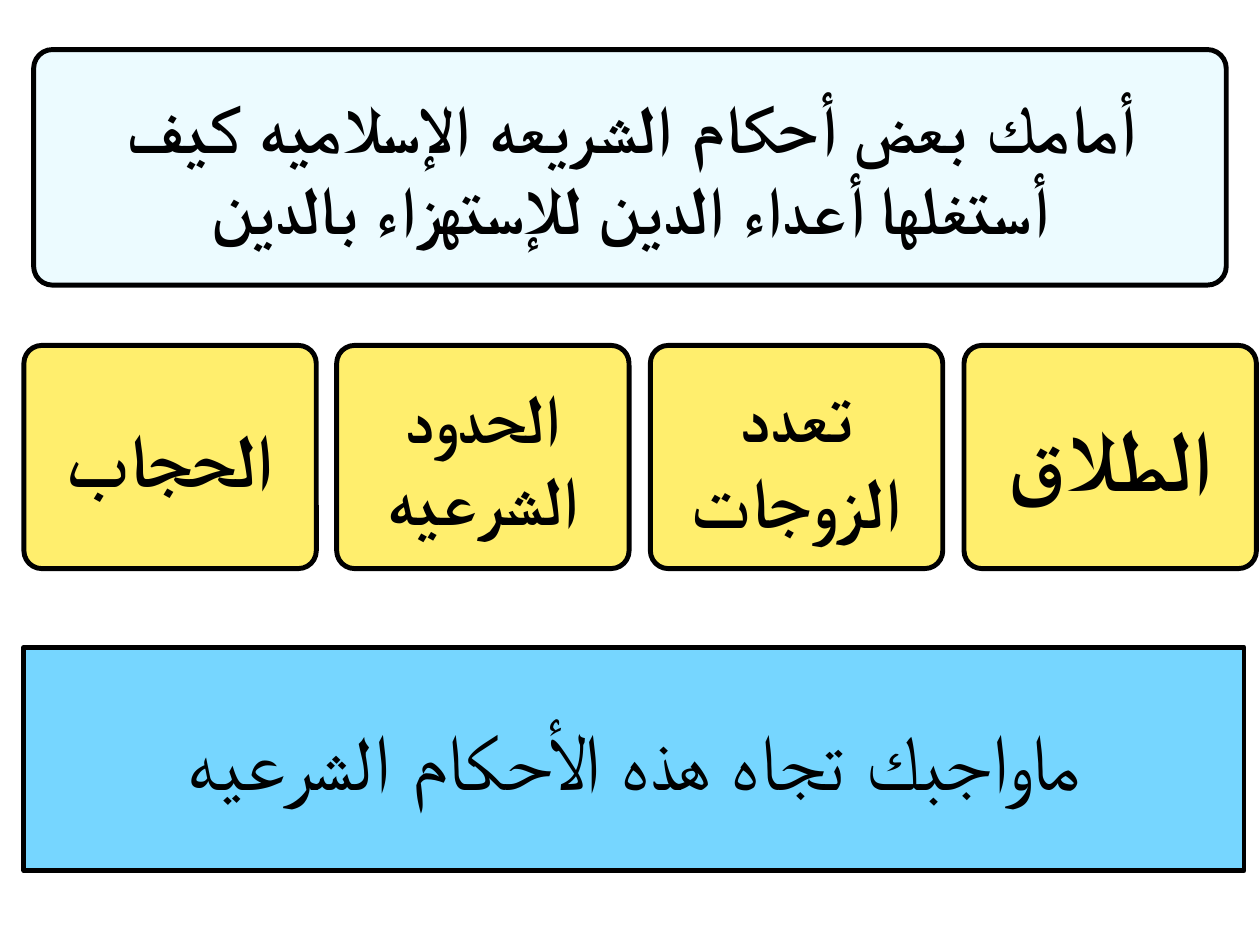
from dataclasses import dataclass

from lxml.etree import SubElement
from pptx import Presentation
from pptx.dml.color import RGBColor
from pptx.enum.shapes import MSO_SHAPE
from pptx.enum.text import MSO_ANCHOR, PP_ALIGN
from pptx.oxml.ns import qn
from pptx.slide import Slide
from pptx.util import Pt

EMU_PER_PX = 9144  # 100 px to the inch


@dataclass(frozen=True)
class Theme:
    font: str = "Arial"
    ink: str = "000000"
    header_fill: str = "ECFBFF"
    card_fill: str = "FFEE6D"
    question_fill: str = "76D6FF"
    header_size: int = 55
    divorce_size: int = 70
    polygamy_size: int = 58
    punishments_size: int = 56
    hijab_size: int = 61
    question_size: int = 64
    outline_width: int = 4


@dataclass(frozen=True)
class Panel:
    text: str
    left: int
    top: int
    width: int
    height: int
    fill: str
    size: int
    corner: float = 0  # zero gives square corners
    bold: bool = True


THEME = Theme()
SLIDE_WIDTH, SLIDE_HEIGHT = 1422, 1067
INSET = 6
MARGIN_LEFT = 27
PANEL_HEIGHT = 252

# Row of cards, listed from left to right
CARD_TOP, CARD_WIDTH = 390, 330
LAST_CARD_LEFT = 1088
CARDS = [
    ("الحجاب", THEME.hijab_size),
    ("الحدود الشرعيه", THEME.punishments_size),
    ("تعدد الزوجات", THEME.polygamy_size),
    ("الطلاق", THEME.divorce_size),
]


def px(length: int) -> int:
    return length * EMU_PER_PX


def color(value: str) -> RGBColor:
    return RGBColor.from_string(value)


def draw_panel(slide: Slide, panel: Panel) -> None:
    kind = MSO_SHAPE.ROUNDED_RECTANGLE if panel.corner else MSO_SHAPE.RECTANGLE
    shape = slide.shapes.add_shape(
        kind, px(panel.left), px(panel.top), px(panel.width), px(panel.height)
    )
    if panel.corner:
        shape.adjustments[0] = panel.corner
    shape.shadow.inherit = False
    shape.fill.solid()
    shape.fill.fore_color.rgb = color(panel.fill)
    shape.line.color.rgb = color(THEME.ink)
    shape.line.width = Pt(THEME.outline_width)

    # Centred right-to-left text
    frame = shape.text_frame
    frame.word_wrap = True
    frame.vertical_anchor = MSO_ANCHOR.MIDDLE
    frame.margin_left = frame.margin_right = px(INSET)
    frame.margin_top = frame.margin_bottom = px(INSET)
    paragraph = frame.paragraphs[0]
    paragraph.alignment = PP_ALIGN.CENTER
    paragraph._p.get_or_add_pPr().set("rtl", "1")
    run = paragraph.add_run()
    run.text = panel.text
    run.font.name = THEME.font
    run.font.size = Pt(panel.size)
    run.font.bold = panel.bold
    run.font.color.rgb = color(THEME.ink)
    SubElement(run._r.get_or_add_rPr(), qn("a:cs"), typeface=THEME.font)


def build_panels() -> list[Panel]:
    header = Panel(
        "أمامك بعض أحكام الشريعه الإسلاميه كيف أستغلها أعداء الدين للإستهزاء بالدين",
        38, 56, 1346, 266, THEME.header_fill, THEME.header_size, corner=0.08,
    )
    span = LAST_CARD_LEFT - MARGIN_LEFT
    cards = [
        Panel(
            text, MARGIN_LEFT + span * index // (len(CARDS) - 1), CARD_TOP,
            CARD_WIDTH, PANEL_HEIGHT, THEME.card_fill, size, corner=0.08,
        )
        for index, (text, size) in enumerate(CARDS)
    ]
    question = Panel(
        "ماواجبك تجاه هذه الأحكام الشرعيه",
        MARGIN_LEFT, 731, 1377, PANEL_HEIGHT,
        THEME.question_fill, THEME.question_size, bold=False,
    )
    return [header, *reversed(cards), question]


def main() -> None:
    presentation = Presentation()
    presentation.slide_width = px(SLIDE_WIDTH)
    presentation.slide_height = px(SLIDE_HEIGHT)
    slide = presentation.slides.add_slide(presentation.slide_layouts[6])
    for panel in build_panels():
        draw_panel(slide, panel)
    presentation.save("out.pptx")


if __name__ == "__main__":
    main()
